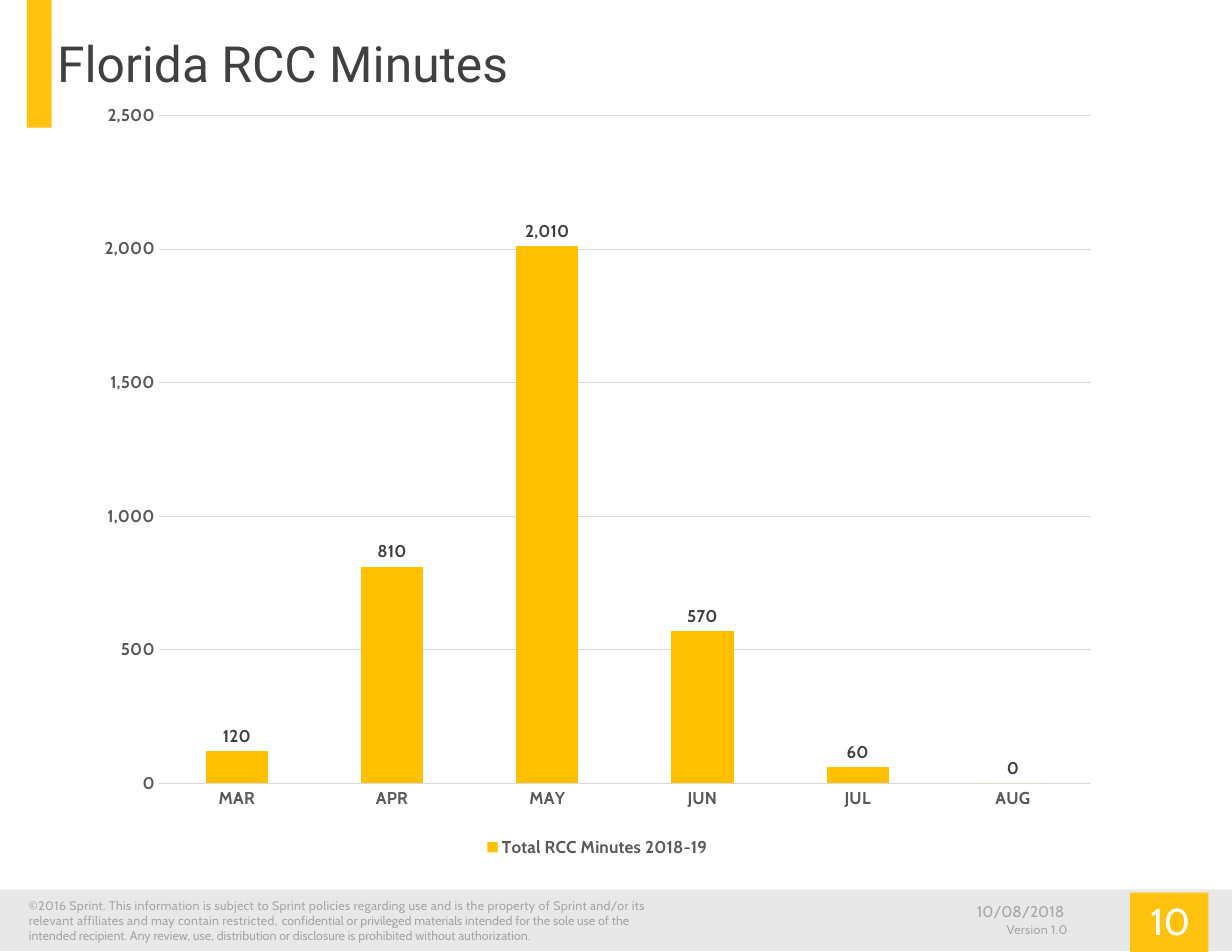
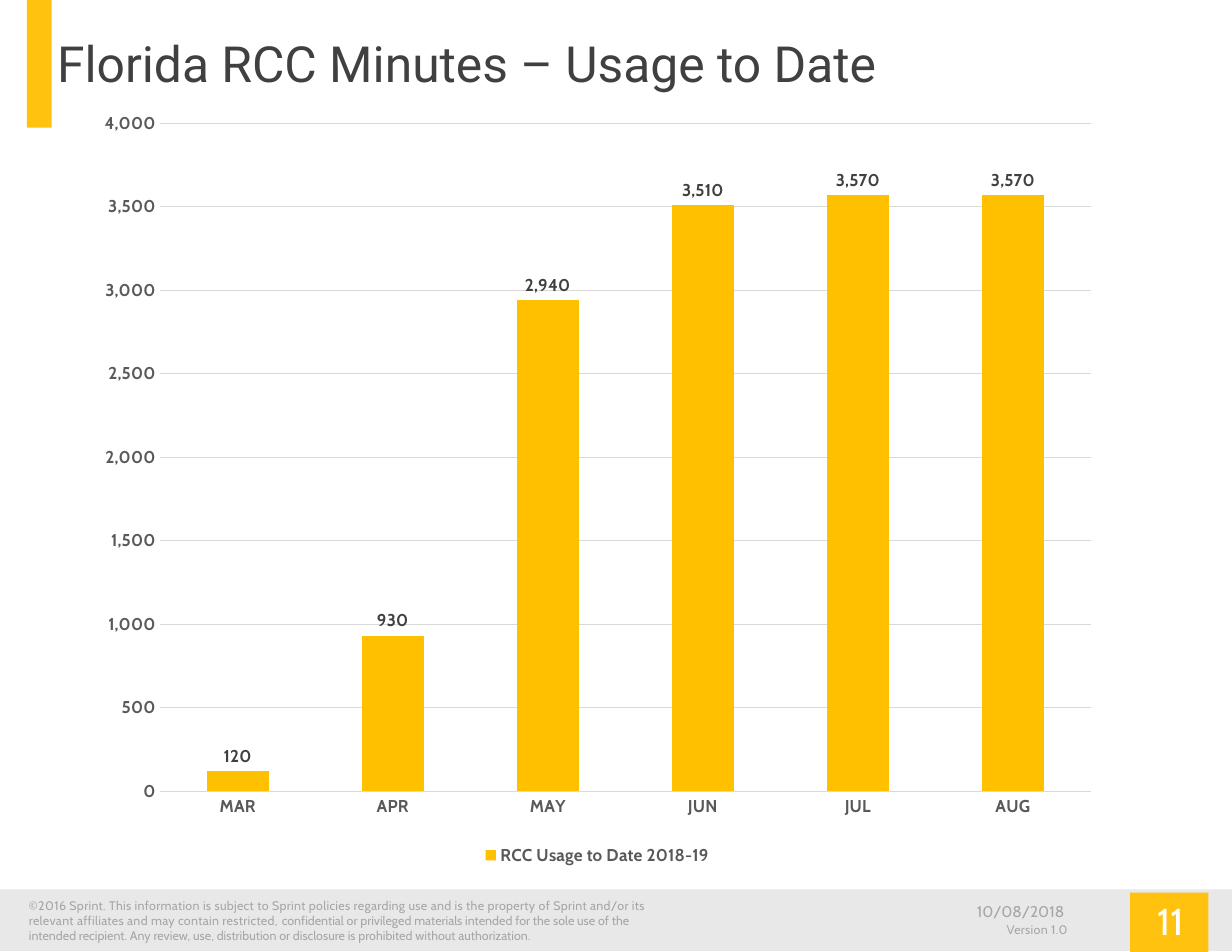
from dataclasses import dataclass

from pptx import Presentation
from pptx.chart.data import CategoryChartData
from pptx.dml.color import RGBColor
from pptx.enum.chart import XL_CHART_TYPE, XL_LABEL_POSITION, XL_LEGEND_POSITION, XL_TICK_MARK
from pptx.enum.shapes import MSO_SHAPE
from pptx.enum.text import MSO_ANCHOR, MSO_AUTO_SIZE, PP_ALIGN
from pptx.util import Inches, Pt

RECT = MSO_SHAPE.RECTANGLE
COLUMNS = XL_CHART_TYPE.COLUMN_CLUSTERED
LEGEND_BOTTOM = XL_LEGEND_POSITION.BOTTOM
LABEL_ABOVE = XL_LABEL_POSITION.OUTSIDE_END
NO_TICK = XL_TICK_MARK.NONE
LEFT, CENTER, RIGHT = PP_ALIGN.LEFT, PP_ALIGN.CENTER, PP_ALIGN.RIGHT
MIDDLE = MSO_ANCHOR.MIDDLE
NO_FIT = MSO_AUTO_SIZE.NONE

# The slide is a grid of 44 columns and 34 rows
CELL = 0.25
COLS, ROWS = 44, 34
TITLE_ONLY = 5


@dataclass(frozen=True)
class Theme:
    title_font: str = "Roboto"
    body_font: str = "Cabin"
    accent: str = "FFC20E"
    bar: str = "FFC000"
    band: str = "E8E8E8"
    grid: str = "D9D9D9"
    dark: str = "404040"
    axis: str = "595959"
    muted: str = "A6A6A6"
    white: str = "FFFFFF"
    title_size: int = 32
    number_size: int = 24
    chart_size: int = 11
    date_size: int = 10
    small_size: int = 8


THEME = Theme()


@dataclass(frozen=True)
class Box:
    """An area of the slide, in grid columns and rows."""
    x: float
    y: float
    w: float
    h: float

    def area(self, x, y, w, h):
        return Box(self.x + x, self.y + y, w, h)

    def place(self):
        return [Inches(v * CELL) for v in (self.x, self.y, self.w, self.h)]


PAGE = Box(0, 0, COLS, ROWS)
HEADER = PAGE.area(0, 0, COLS, 4.56)
FOOTER = PAGE.area(0, 31.76, COLS, 2.2)

MONTHS = ["MAR", "APR", "MAY", "JUN", "JUL", "AUG"]
DATE = "10/08/2018"
VERSION = "Version 1.0"
COPYRIGHT = [
    "©2016 Sprint. This information is subject to Sprint policies regarding use and is the "
    "property of Sprint and/or its relevant affiliates and may contain restricted, ",
    "confidential or privileged materials intended for the sole use of the intended recipient. "
    "Any review, use, distribution or disclosure is prohibited without authorization.",
]

# number, title, top row of the chart, series name, values, axis maximum
SLIDES = [
    (10, "Florida RCC Minutes", 3.2, "Total RCC Minutes 2018-19",
     [120, 810, 2010, 570, 60, 0], 2500),
    (11, "Florida RCC Minutes – Usage to Date", 3.48, "RCC Usage to Date 2018-19",
     [120, 930, 2940, 3510, 3570, 3570], 4000),
]


def style_font(font, size, color, name=THEME.body_font, bold=False):
    font.name, font.size, font.bold = name, Pt(size), bold
    font.color.rgb = RGBColor.from_string(color)


def add_block(slide, box, color):
    sp = slide.shapes.add_shape(RECT, *box.place())
    sp.shadow.inherit = False
    sp.fill.solid()
    sp.fill.fore_color.rgb = RGBColor.from_string(color)
    sp.line.fill.background()


def add_text(slide, box, runs, size, color=THEME.muted, align=LEFT, spaced=False):
    """Add one paragraph; spaced widens the letters of its first run."""
    tf = slide.shapes.add_textbox(*box.place()).text_frame
    tf.word_wrap = True
    p = tf.paragraphs[0]
    p.alignment = align
    style_font(p.font, size, color)
    for text in runs:
        p.add_run().text = text
    if spaced:
        p.runs[0]._r.get_or_add_rPr().set("spc", "20")


def add_header(slide, box, title):
    add_block(slide, box.area(0.96, 0, 0.88, box.h), THEME.accent)
    sp = slide.shapes.title
    sp.left, sp.top, sp.width, sp.height = box.area(2.04, 0.4, 37.64, 3.68).place()
    tf = sp.text_frame
    tf.text = title
    tf.margin_left = tf.margin_right = tf.margin_top = tf.margin_bottom = 0
    tf.vertical_anchor = MIDDLE
    tf.auto_size = NO_FIT
    p = tf.paragraphs[0]
    p.alignment = LEFT
    style_font(p.font, THEME.title_size, THEME.dark, THEME.title_font)


def add_footer(slide, box, number):
    add_block(slide, box, THEME.band)
    add_block(slide, box.area(40.36, 0.12, 2.8, 2.12), THEME.accent)
    add_text(slide, box.area(0.64, 0.12, 23, 2.56), COPYRIGHT, THEME.small_size, spaced=True)
    add_text(slide, box.area(39.04, 0.12, 5.52, 1.92), [str(number)],
             THEME.number_size, THEME.white, CENTER)
    add_text(slide, box.area(31.4, 0.24, 7, 1.08), [DATE], THEME.date_size, align=RIGHT)
    add_text(slide, box.area(35.56, 0.96, 5.44, 0.96), [VERSION], THEME.small_size, spaced=True)


def add_minutes_chart(slide, box, name, values, top):
    data = CategoryChartData(number_format="#,##0")
    data.categories = MONTHS
    data.add_series(name, values)
    chart = slide.shapes.add_chart(COLUMNS, *box.place(), data).chart
    chart.has_title = False
    style_font(chart.font, THEME.chart_size, THEME.axis, bold=True)

    # Legend
    chart.has_legend = True
    chart.legend.position = LEGEND_BOTTOM
    chart.legend.include_in_layout = False
    style_font(chart.legend.font, THEME.chart_size, THEME.axis, bold=True)

    # Axes
    for axis in (chart.category_axis, chart.value_axis):
        axis.major_tick_mark = axis.minor_tick_mark = NO_TICK
        axis.format.line.fill.background()
        style_font(axis.tick_labels.font, THEME.chart_size, THEME.axis, bold=True)
    axis = chart.value_axis
    axis.minimum_scale, axis.maximum_scale, axis.major_unit = 0, top, 500
    axis.tick_labels.number_format = "#,##0"
    axis.tick_labels.number_format_is_linked = False
    axis.has_major_gridlines = True
    line = axis.major_gridlines.format.line
    line.width = Pt(0.75)
    line.color.rgb = RGBColor.from_string(THEME.grid)

    # Bars and their labels
    plot = chart.plots[0]
    plot.gap_width = 150
    plot.vary_by_categories = False
    series = plot.series[0]
    series.format.fill.solid()
    series.format.fill.fore_color.rgb = RGBColor.from_string(THEME.bar)
    labels = series.data_labels
    labels.show_value = True
    labels.position = LABEL_ABOVE
    labels.number_format = "#,##0"
    labels.number_format_is_linked = False
    style_font(labels.font, THEME.chart_size, THEME.dark, bold=True)


def add_chart_slide(prs, number, title, chart_row, name, values, top):
    slide = prs.slides.add_slide(prs.slide_layouts[TITLE_ONLY])
    add_header(slide, HEADER, title)
    add_footer(slide, FOOTER, number)
    add_minutes_chart(slide, PAGE.area(3, chart_row, 36.68, 27.6), name, values, top)


def main():
    prs = Presentation()
    prs.slide_width, prs.slide_height = Inches(COLS * CELL), Inches(ROWS * CELL)
    for content in SLIDES:
        add_chart_slide(prs, *content)
    prs.save("out.pptx")


if __name__ == "__main__":
    main()
